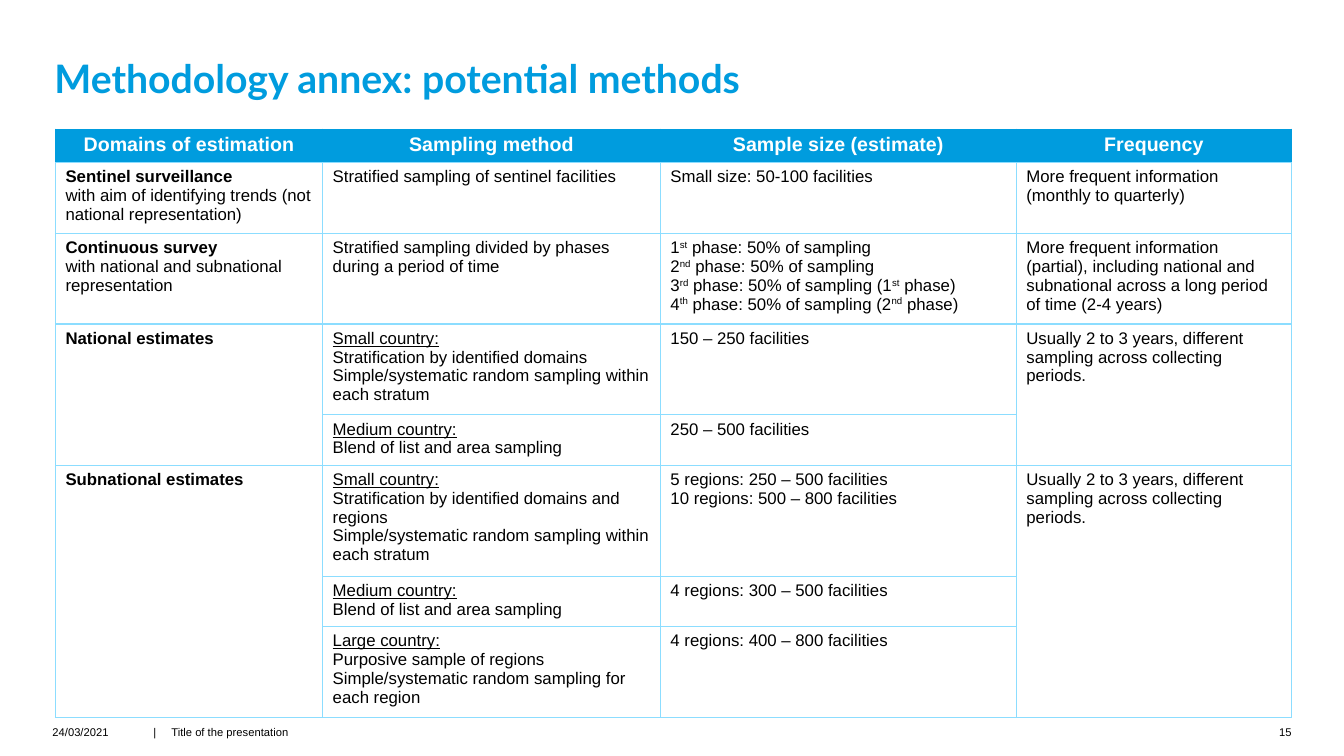
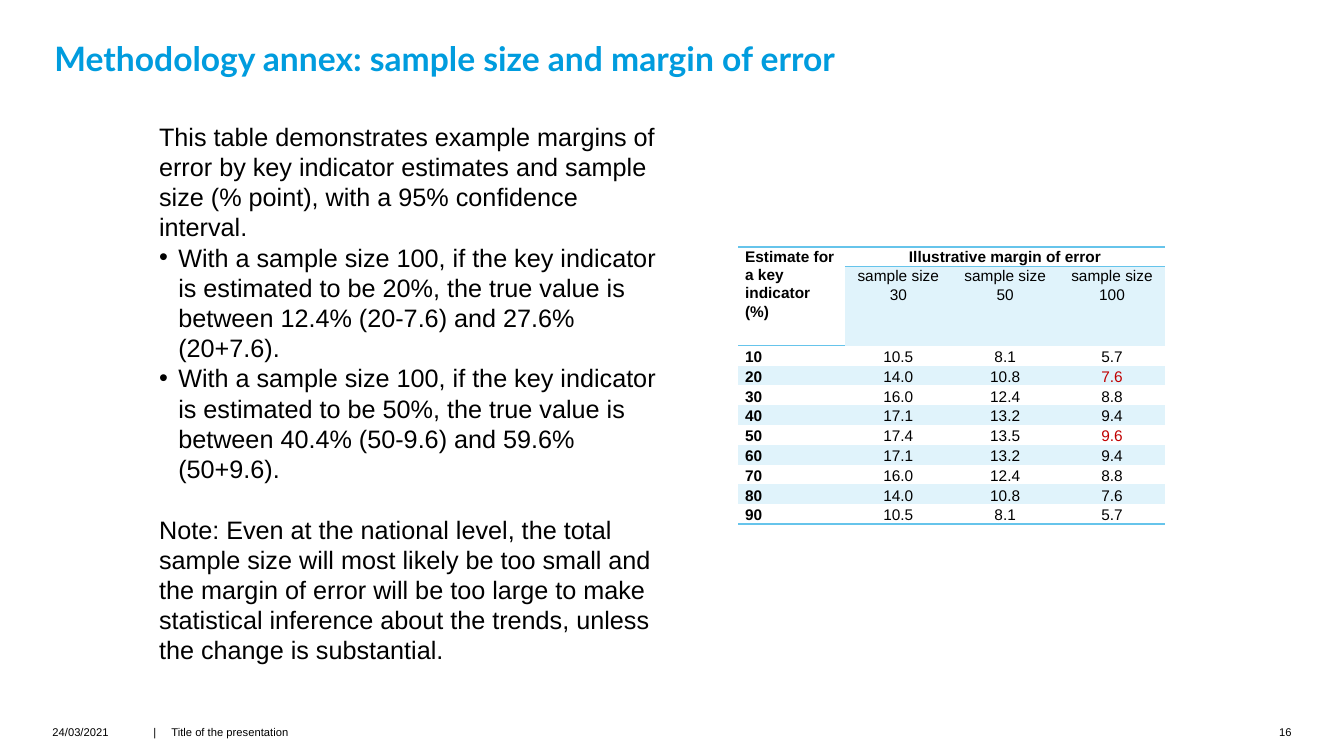
from pptx import Presentation
from pptx import util as u
from pptx.dml.color import RGBColor
from pptx.enum import text
from pptx.oxml import parse_xml
from pptx.oxml.ns import nsdecls

COLORS = {"blue": "009CDE", "sky": "8CDDFF", "rule": "66C4EB", "pale": "E0F3FB",
          "red": "C00000", "black": "000000", "white": "FFFFFF"}
LEFT, CENTER, RIGHT = text.PP_ALIGN.LEFT, text.PP_ALIGN.CENTER, text.PP_ALIGN.RIGHT
TOP, BOTTOM = text.MSO_ANCHOR.TOP, text.MSO_ANCHOR.BOTTOM


def write(frame, lines, size=12, font="Arial", color="black", bold=False,
          align=LEFT, spacing=1.0):
    """One paragraph a line; leading * is bold, leading _ underlined, ^x^ raised."""
    frame.word_wrap = True
    for index, line in enumerate(lines):
        para = frame.add_paragraph() if index else frame.paragraphs[0]
        para.alignment = align
        para.line_spacing = spacing
        for part, piece in enumerate(line.lstrip("*_").split("^")):
            span = para.add_run()
            span.text = piece
            span.font.size = u.Pt(size)
            span.font.name = font
            span.font.bold = bold or line.startswith("*")
            span.font.underline = line.startswith("_")
            span.font.color.rgb = RGBColor.from_string(COLORS[color])
            if part % 2:
                span.font._element.set("baseline", "30000")


def style_cell(cell, fill=None, **borders):
    """Borders are given as L, R, T, B = (colour, points); the others are hidden."""
    properties = cell._tc.get_or_add_tcPr()
    for side in "LRTB":
        if side in borders:
            color, width = borders[side]
            paint = f'<a:solidFill><a:srgbClr val="{COLORS[color]}"/></a:solidFill>'
        else:
            paint, width = "<a:noFill/>", 0
        properties.append(parse_xml(
            f'<a:ln{side} {nsdecls("a")} w="{u.Pt(width)}">{paint}</a:ln{side}>'))
    if fill:
        cell.fill.solid()
        cell.fill.fore_color.rgb = RGBColor.from_string(COLORS[fill])
    else:
        cell.fill.background()


deck = Presentation()
deck.slide_width, deck.slide_height = u.Inches(13.33), u.Inches(7.5)

# Titles and footers
titles = [  # text, size, top, height
    ("Methodology annex: potential methods", 28, 0.39, 0.62),
    ("Methodology annex: sample size and margin of error", 24, 0.37, 0.41),
]
pages = []
for number, (title, size, top, height) in enumerate(titles, 15):
    page = deck.slides.add_slide(deck.slide_layouts[6])
    pages.append(page)
    box = page.shapes.add_textbox(u.Inches(0.52), u.Inches(top), u.Inches(8.92), u.Inches(height))
    frame = box.text_frame
    frame.margin_left, frame.margin_right = u.Inches(0.02), u.Inches(0.39)
    frame.margin_top = frame.margin_bottom = 0
    frame.vertical_anchor = BOTTOM
    write(frame, [title], size=size, font="Lato", color="blue", bold=True, spacing=0.9)

    footer = [(0.52, 0.86, "24/03/2021", LEFT), (1.52, 0.15, "|", LEFT),
              (1.7, 3.07, "Title of the presentation", LEFT), (12.49, 0.32, str(number), RIGHT)]
    for left, width, label, align in footer:
        box = page.shapes.add_textbox(u.Inches(left), u.Inches(7.2), u.Inches(width), u.Inches(0.2))
        frame = box.text_frame
        frame.margin_left = frame.margin_right = frame.margin_top = frame.margin_bottom = 0
        write(frame, [label], size=8, align=align)

# Slide 15: table of methods
header = ["Domains of estimation", "Sampling method", "Sample size (estimate)", "Frequency"]
random_sampling = "Simple/systematic random sampling within each stratum"
medium = ["_Medium country:", "Blend of list and area sampling"]
yearly = ["Usually 2 to 3 years, different sampling across collecting periods."]
methods = [
    [["*Sentinel surveillance", "with aim of identifying trends (not national representation)"],
     ["Stratified sampling of sentinel facilities"],
     ["Small size: 50-100 facilities"],
     ["More frequent information (monthly to quarterly)"]],
    [["*Continuous survey", "with national and subnational representation"],
     ["Stratified sampling divided by phases during a period of time"],
     ["1^st^ phase: 50% of sampling", "2^nd^ phase: 50% of sampling",
      "3^rd^ phase: 50% of sampling (1^st^ phase)",
      "4^th^ phase: 50% of sampling (2^nd^ phase)"],
     ["More frequent information (partial), including national and subnational "
      "across a long period of time (2-4 years)"]],
    [["*National estimates"],
     ["_Small country:", "Stratification by identified domains", random_sampling],
     ["150 – 250 facilities"], yearly],
    [[], medium, ["250 – 500 facilities"], []],
    [["*Subnational estimates"],
     ["_Small country:", "Stratification by identified domains and regions", random_sampling],
     ["5 regions: 250 – 500 facilities", "10 regions: 500 – 800 facilities"], yearly],
    [[], medium, ["4 regions: 300 – 500 facilities"], []],
    [[], ["_Large country:", "Purposive sample of regions",
          "Simple/systematic random sampling for each region"],
     ["4 regions: 400 – 800 facilities"], []],
]
heights = [0.32, 0.65, 0.85, 0.85, 0.47, 1.04, 0.47, 0.85]
widths = [2.65, 3.35, 3.53, 2.73]
table = pages[0].shapes.add_table(len(heights), len(widths), u.Inches(0.55), u.Inches(1.28),
                                  u.Inches(sum(widths)), u.Inches(sum(heights))).table
table.first_row = table.horz_banding = False
for column, width in zip(table.columns, widths):
    column.width = u.Inches(width)
for row, height in zip(table.rows, heights):
    row.height = u.Inches(height)

edge, line = ("blue", 0.5), ("sky", 1)
for column, label in enumerate(header):
    cell = table.cell(0, column)
    style_cell(cell, "blue", L=edge, R=edge, T=edge, B=line)
    write(cell.text_frame, [label], size=14, color="white", bold=True, align=CENTER)
for row, entries in enumerate(methods, 1):
    for column, lines in enumerate(entries):
        cell = table.cell(row, column)
        style_cell(cell, "white", L=line, R=line, T=line, B=line)
        write(cell.text_frame, lines)
for first, last in [(3, 4), (5, 7)]:
    for column in (0, 3):
        table.cell(first, column).merge(table.cell(last, column))

# Slide 16: margin of error table
margins = [
    (10, 10.5, 8.1, 5.7), (20, 14.0, 10.8, 7.6), (30, 16.0, 12.4, 8.8),
    (40, 17.1, 13.2, 9.4), (50, 17.4, 13.5, 9.6), (60, 17.1, 13.2, 9.4),
    (70, 16.0, 12.4, 8.8), (80, 14.0, 10.8, 7.6), (90, 10.5, 8.1, 5.7),
]
highlights = {(20, 3), (50, 3)}
rows = [
    [["*Estimate for a key indicator (%)"], ["*Illustrative margin of error"], [], []],
    [[]] + [["sample size", size] for size in ("30", "50", "100")],
] + [[[f"*{estimate}"]] + [[f"{value:.1f}"] for value in values] for estimate, *values in margins]
heights = [0.18, 0.73] + [0.18] * len(margins)
table = pages[1].shapes.add_table(len(rows), 4, u.Inches(7.32), u.Inches(2.45),
                                  u.Inches(4.24), u.Inches(sum(heights))).table
table.first_row = table.horz_banding = False
rule = ("rule", 1)
for row, entries in enumerate(rows):
    table.rows[row].height = u.Inches(heights[row])
    for column, lines in enumerate(entries):
        cell = table.cell(row, column)
        cell.margin_left = cell.margin_right = u.Inches(0.07)
        cell.margin_top = cell.margin_bottom = 0
        cell.vertical_anchor = BOTTOM if row > 1 else TOP
        borders = {}
        if row == 0:
            borders["T"] = rule
        if row in (0, len(rows) - 1) or (row, column) == (1, 0):
            borders["B"] = rule
        shaded = row % 2 == 1 and (row, column) != (1, 0)
        style_cell(cell, "pale" if shaded else None, **borders)
        marked = row > 1 and (margins[row - 2][0], column) in highlights
        write(cell.text_frame, lines, size=11, color="red" if marked else "black",
              align=CENTER if column else LEFT, spacing=1.07)
table.cell(0, 0).merge(table.cell(1, 0))
table.cell(0, 1).merge(table.cell(0, 3))

# Slide 16: explanation
box = pages[1].shapes.add_textbox(u.Inches(1.48), u.Inches(1.15), u.Inches(5.16), u.Inches(5.86))
write(box.text_frame, [
    "This table demonstrates example margins of error by key indicator estimates "
    "and sample size (% point), with a 95% confidence interval.",
    "With a sample size 100, if the key indicator is estimated to be 20%, "
    "the true value is between 12.4% (20-7.6) and 27.6% (20+7.6).",
    "With a sample size 100, if the key indicator is estimated to be 50%, "
    "the true value is between 40.4% (50-9.6) and 59.6% (50+9.6).",
    "Note: Even at the national level, the total sample size will most likely be too small "
    "and the margin of error will be too large to make statistical inference about the trends, "
    "unless the change is substantial.",
], size=18)
paragraphs = box.text_frame.paragraphs
paragraphs[3].space_before = u.Pt(21.5)
for para in paragraphs[1:3]:
    properties = para._p.get_or_add_pPr()
    properties.set("marL", str(u.Inches(0.19)))
    properties.set("indent", str(u.Inches(-0.19)))
    properties.append(parse_xml(f'<a:buFont {nsdecls("a")} typeface="Arial"/>'))
    properties.append(parse_xml(f'<a:buChar {nsdecls("a")} char="•"/>'))

deck.save("out.pptx")
